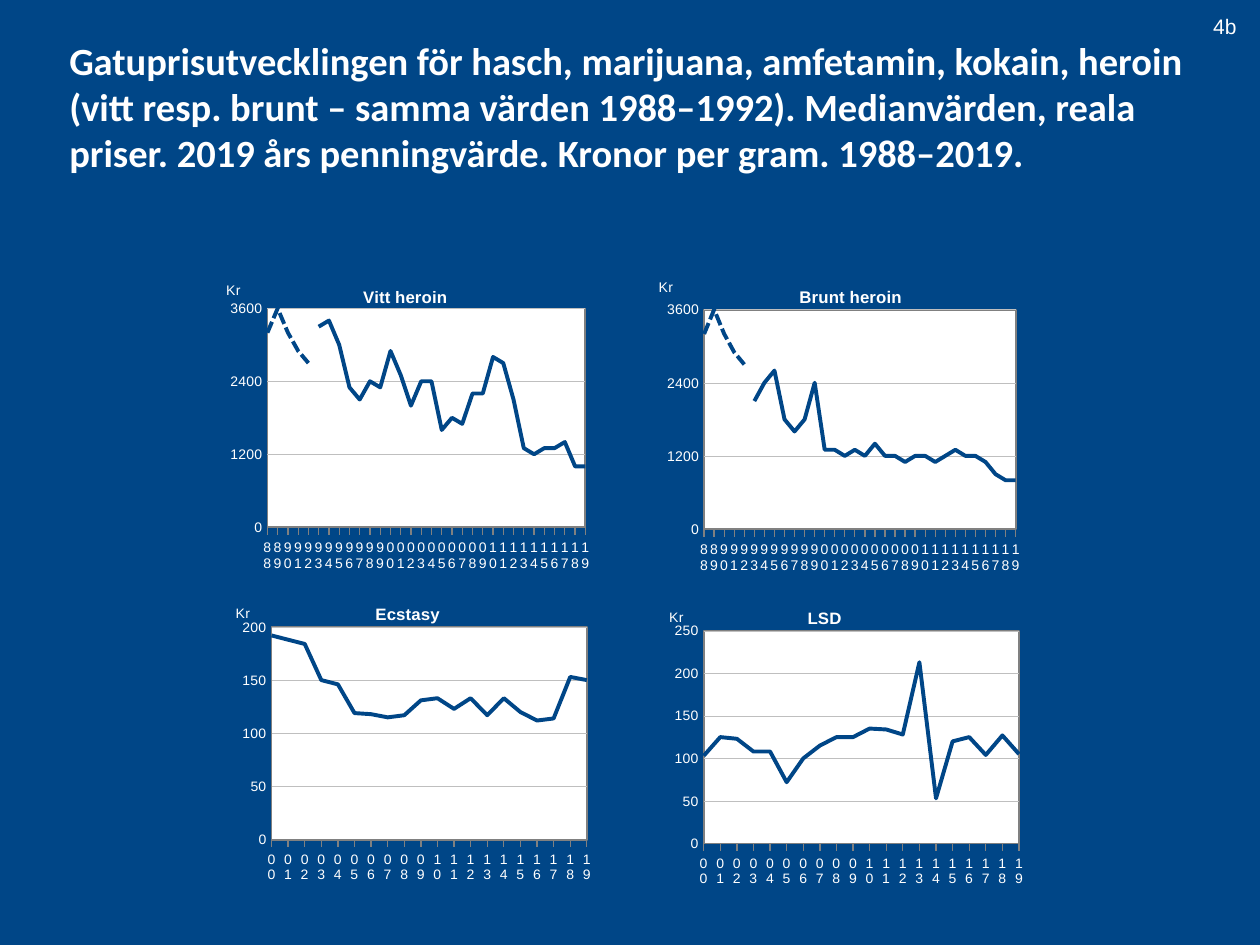
from dataclasses import dataclass

from lxml.etree import SubElement
from pptx import Presentation
from pptx.chart.data import CategoryChartData
from pptx.dml.color import RGBColor
from pptx.enum.chart import XL_CHART_TYPE, XL_MARKER_STYLE, XL_TICK_MARK
from pptx.enum.dml import MSO_LINE
from pptx.enum.text import MSO_ANCHOR, PP_ALIGN
from pptx.oxml import parse_xml
from pptx.oxml.ns import nsdecls, qn
from pptx.util import Inches, Pt


@dataclass(frozen=True)
class Theme:
    blue: RGBColor = RGBColor(0x00, 0x46, 0x87)
    white: RGBColor = RGBColor(0xFF, 0xFF, 0xFF)
    grid: RGBColor = RGBColor(0xBF, 0xBF, 0xBF)
    frame: RGBColor = RGBColor(0x80, 0x80, 0x80)
    heading: str = "Calibri"
    body: str = "Arial"
    title_size: float = 22
    number_size: float = 12
    chart_title_size: float = 9.6
    label_size: float = 8


THEME = Theme()
WIDTH, HEIGHT = Inches(10), Inches(7.5)


def years(first):
    return [f"{y % 100:02d}" for y in range(first, 2020)]


# Shared 1988-1992 heroin values, then each kind's own values from 1993
EARLY_HEROIN = [3200, 3600, 3200, 2900, 2700]
WHITE_HEROIN = [3300, 3400, 3000, 2300, 2100, 2400, 2300, 2900, 2500, 2000, 2400, 2400, 1600, 1800,
                1700, 2200, 2200, 2800, 2700, 2100, 1300, 1200, 1300, 1300, 1400, 1000, 1000]
BROWN_HEROIN = [2100, 2400, 2600, 1800, 1600, 1800, 2400, 1300, 1300, 1200, 1300, 1200, 1400, 1200,
                1200, 1100, 1200, 1200, 1100, 1200, 1300, 1200, 1200, 1100, 900, 800, 800]
ECSTASY = [192, 188, 184, 150, 146, 119, 118, 115, 117, 131,
           133, 123, 133, 117, 133, 120, 112, 114, 153, 150]
LSD = [103, 125, 123, 108, 108, 72, 100, 115, 125, 125,
       135, 134, 128, 213, 53, 120, 125, 104, 127, 105]


def heroin_series(name, late):
    return [(name, EARLY_HEROIN + [None] * len(late)),
            ("Series 2", [None] * len(EARLY_HEROIN) + late)]


# Boxes are shares of the slide; inner positions are shares of the chart
PANELS = [
    dict(name="Vitt heroin", box=(0.142, 0.281, 0.355, 0.323), first=1988, top=3600, step=1200,
         series=heroin_series("Vitt heroin", WHITE_HEROIN),
         plot=(0.198, 0.142, 0.711, 0.724), title_at=(0.405, 0.056), unit_at=(0.1, 0.043)),
    dict(name="Brunt heroin", box=(0.482, 0.279, 0.359, 0.331), first=1988, top=3600, step=1200,
         series=heroin_series("Brunt heroin", BROWN_HEROIN),
         plot=(0.214, 0.147, 0.689, 0.702), title_at=(0.418, 0.06), unit_at=(0.108, 0.037)),
    dict(name="Ecstasy", box=(0.144, 0.615, 0.354, 0.319), first=2000, top=200, step=50,
         series=[("Ecstasy", ECSTASY)],
         plot=(0.202, 0.156, 0.707, 0.724), title_at=(0.428, 0.065), unit_at=(0.116, 0.07)),
    dict(name="LSD", box=(0.487, 0.619, 0.354, 0.319), first=2000, top=250, step=50,
         series=[("LSD", LSD)],
         plot=(0.202, 0.156, 0.707, 0.724), title_at=(0.428, 0.065), unit_at=(0.119, 0.07)),
]


def scale(box):
    x, y, w, h = box
    return int(x * WIDTH), int(y * HEIGHT), int(w * WIDTH), int(h * HEIGHT)


def add_run(p, text, font, size, bold=False):
    r = p.add_run()
    r.text = text
    r.font.name, r.font.size, r.font.bold = font, Pt(size), bold
    r.font.color.rgb = THEME.white


def set_layout(parent, index, values, inner=False):
    """Give a chart part a manual layout: x, y and optionally w, h."""
    old = parent.find(qn("c:layout"))
    if old is not None:
        parent.remove(old)
    layout = parse_xml(f"<c:layout {nsdecls('c')}><c:manualLayout/></c:layout>")
    manual = layout[0]
    if inner:
        SubElement(manual, qn("c:layoutTarget")).set("val", "inner")
    for tag in ("xMode", "yMode"):
        SubElement(manual, qn(f"c:{tag}")).set("val", "edge")
    for tag, value in zip("xywh", values):
        SubElement(manual, qn(f"c:{tag}")).set("val", str(value))
    parent.insert(index, layout)


def set_title(owner, text, size, at, bold=False):
    """Title a chart or an axis, horizontally, at the given place."""
    owner.has_title = True
    title = owner.chart_title if hasattr(owner, "chart_title") else owner.axis_title
    tf = title.text_frame
    add_run(tf.paragraphs[0], text, THEME.body, size, bold)
    rich = tf.paragraphs[0]._p.getparent()
    rich.find(qn("a:bodyPr")).set("rot", "0")
    tx = rich.getparent()
    set_layout(tx.getparent(), 1, at)


def format_axes(chart, panel):
    # Value axis
    va = chart.value_axis
    va.minimum_scale, va.maximum_scale, va.major_unit = 0, panel["top"], panel["step"]
    va.major_tick_mark = va.minor_tick_mark = XL_TICK_MARK.NONE
    va.tick_labels.number_format = "0"
    va.tick_labels.number_format_is_linked = False
    va.format.line.fill.background()
    grid = va.major_gridlines.format.line
    grid.color.rgb, grid.width = THEME.grid, Pt(0.25)
    set_title(va, "Kr", THEME.label_size, panel["unit_at"])
    ax = va._element
    cross = ax.find(qn("c:crossBetween"))
    if cross is None:
        cross = parse_xml(f"<c:crossBetween {nsdecls('c')}/>")
        ax.find(qn("c:crosses")).addnext(cross)
    cross.set("val", "midCat")

    # Category axis: every year labelled, upright
    ca = chart.category_axis
    ca.major_tick_mark, ca.minor_tick_mark = XL_TICK_MARK.OUTSIDE, XL_TICK_MARK.NONE
    ca.format.line.color.rgb = THEME.frame
    ca.tick_labels.font.size = Pt(THEME.label_size)
    ca.tick_labels.font.color.rgb = THEME.white
    ax = ca._element
    ax.find(qn("c:txPr")).find(qn("a:bodyPr")).set("rot", "0")
    skip = parse_xml(f'<c:tickLblSkip {nsdecls("c")} val="1"/>')
    ax.find(qn("c:noMultiLvlLbl")).addprevious(skip)


def format_plot(chart, panel):
    area = chart._chartSpace.find(qn("c:chart")).find(qn("c:plotArea"))
    set_layout(area, 0, panel["plot"], inner=True)
    area.append(parse_xml(
        f'<c:spPr {nsdecls("c", "a")}>'
        f'<a:solidFill><a:srgbClr val="{THEME.white}"/></a:solidFill>'
        f'<a:ln w="12700"><a:solidFill><a:srgbClr val="{THEME.frame}"/></a:solidFill></a:ln>'
        '</c:spPr>'))
    chart.plots[0].vary_by_categories = False
    for series in chart.series:
        series.smooth = False
        series.marker.style = XL_MARKER_STYLE.NONE
        line = series.format.line
        line.color.rgb, line.width = THEME.blue, Pt(2.25)
    if len(panel["series"]) > 1:
        chart.series[0].format.line.dash_style = MSO_LINE.SQUARE_DOT


def add_price_chart(s, panel):
    data = CategoryChartData()
    data.categories = years(panel["first"])
    for name, values in panel["series"]:
        data.add_series(name, values)
    chart = s.shapes.add_chart(XL_CHART_TYPE.LINE, *scale(panel["box"]), data).chart
    chart.has_legend = False
    chart.font.name, chart.font.size = THEME.body, Pt(THEME.label_size)
    chart.font.color.rgb = THEME.white
    set_title(chart, panel["name"], THEME.chart_title_size, panel["title_at"], bold=True)
    format_axes(chart, panel)
    format_plot(chart, panel)


def add_heading(s, box):
    sp = s.shapes.title
    sp.left, sp.top, sp.width, sp.height = scale(box)
    tf = sp.text_frame
    tf.word_wrap, tf.vertical_anchor = True, MSO_ANCHOR.TOP
    p = tf.paragraphs[0]
    p.alignment = PP_ALIGN.LEFT
    add_run(p, "Gatuprisutvecklingen för hasch, marijuana, amfetamin, kokain, heroin (vitt resp. "
            "brunt – samma värden 1988–1992). Medianvärden, reala priser. 2019 års penningvärde. "
            "Kronor per gram. 1988–2019.", THEME.heading, THEME.title_size, bold=True)


def add_figure_number(s, box):
    tf = s.shapes.add_textbox(*scale(box)).text_frame
    tf.word_wrap = True
    add_run(tf.paragraphs[0], "4b", THEME.body, THEME.number_size)


def main():
    prs = Presentation()
    prs.slide_width, prs.slide_height = WIDTH, HEIGHT
    s = prs.slides.add_slide(prs.slide_layouts[5])
    s.background.fill.solid()
    s.background.fill.fore_color.rgb = THEME.blue
    add_figure_number(s, (0.953, 0.008, 0.047, 0.04))
    add_heading(s, (0.045, 0.032, 0.91, 0.21))
    for panel in PANELS:
        add_price_chart(s, panel)
    prs.save("out.pptx")


if __name__ == "__main__":
    main()
